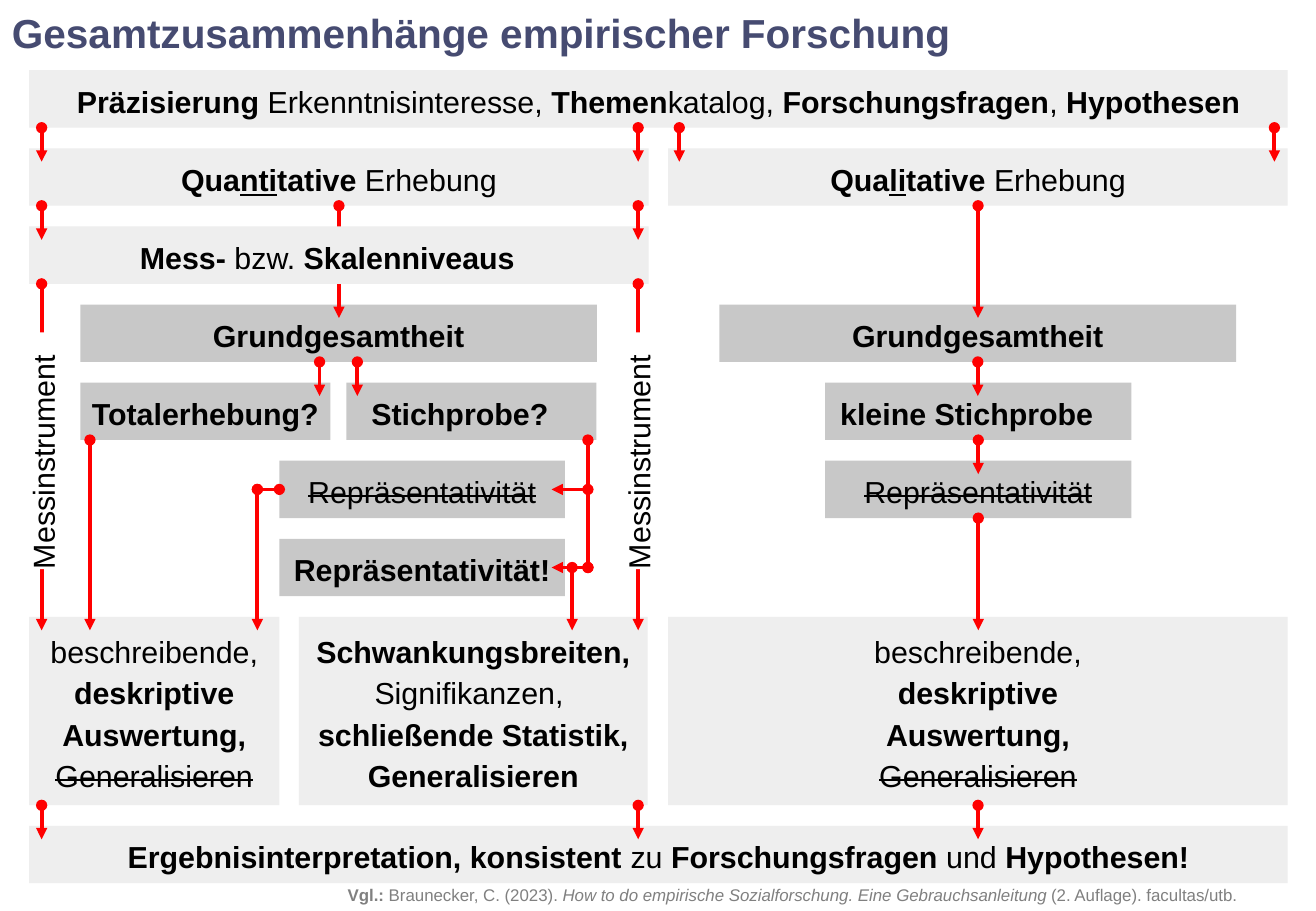
"""Build a flow chart slide on the stages of empirical research."""
from dataclasses import dataclass

import pptx
import pptx.dml.color
import pptx.enum.shapes
import pptx.enum.text
import pptx.oxml
import pptx.oxml.ns
import pptx.util
from pptx.util import Cm


@dataclass(frozen=True)
class Theme:
    font: str = "Arial"
    title: str = "464B71"
    text: str = "000000"
    source: str = "808080"
    arrow: str = "FF0000"
    light: str = "EEEEEE"
    dark: str = "C8C8C8"
    white: str = "FFFFFF"
    title_size: int = 24
    body_size: int = 18
    source_size: int = 10
    line_width: float = 2.25


THEME = Theme()
ALIGN = pptx.enum.text.PP_ALIGN
MIDDLE = pptx.enum.text.MSO_ANCHOR.MIDDLE

FIRST_TOP, EVALUATION_TOP, RESULT_TOP = 1.47, 12.9, 17.27
EVALUATION = 7
ROW_PITCH = (EVALUATION_TOP - FIRST_TOP) / EVALUATION
ROW_TOPS = [FIRST_TOP + row * ROW_PITCH for row in range(EVALUATION + 1)] + [RESULT_TOP]
BOX_HEIGHT, EVALUATION_HEIGHT = 1.2, 3.94
TIP_DEPTH = 0.28

LEFT, RIGHT = 0.61, 13.97
FULL, HALF = 26.31, 12.95
LEFT_RAIL, MIDDLE_RAIL = 0.87, 13.34
SAMPLE_RAIL, PLAIN_RAIL = 12.29, 5.38

POPULATION = [("Grundgesamtheit", "b")]
NOT_REPRESENTATIVE = [("Repräsentativität", "s")]
DESCRIPTIVE = [("beschreibende,\n", ""), ("deskriptive\nAuswertung,\n", "b"),
               ("Generalisieren", "s")]


def color(value):
    return pptx.dml.color.RGBColor.from_string(value)


def row_height(row):
    return EVALUATION_HEIGHT if row == EVALUATION else BOX_HEIGHT


def row_bottom(row):
    return Cm(ROW_TOPS[row] + row_height(row))


def row_middle(row):
    return Cm(ROW_TOPS[row] + row_height(row) / 2)


def row_tip(row):
    return Cm(ROW_TOPS[row] + TIP_DEPTH)


def set_margins(frame, left=0, top=0, right=0, bottom=0):
    frame.margin_left, frame.margin_top = Cm(left), Cm(top)
    frame.margin_right, frame.margin_bottom = Cm(right), Cm(bottom)


def write(frame, runs, size, ink, alignment):
    """Fill the first paragraph with runs styled by the flags b, i, u and s."""
    frame.word_wrap = True
    frame.vertical_anchor = MIDDLE
    paragraph = frame.paragraphs[0]
    paragraph.alignment = alignment
    paragraph.font.name = THEME.font
    paragraph.font.size = pptx.util.Pt(size)
    paragraph.font.color.rgb = color(ink)
    styles = {style for _, style in runs}
    all_bold = styles == {"b"}
    paragraph.font.bold = all_bold
    for text, style in runs:
        for index, line in enumerate(text.split("\n")):
            if index:
                paragraph.add_line_break()
            if not line:
                continue
            run = paragraph.add_run()
            run.text = line
            if "b" in style and not all_bold:
                run.font.bold = True
            if "i" in style:
                run.font.italic = True
            if "u" in style:
                run.font.underline = True
            if "s" in style:
                run._r.get_or_add_rPr().set("strike", "sngStrike")
    return paragraph


def add_panel(slide, bounds, fill, runs, alignment=ALIGN.CENTER, right_margin=0):
    shape = slide.shapes.add_shape(
        pptx.enum.shapes.MSO_SHAPE.RECTANGLE, *[Cm(value) for value in bounds])
    shape.shadow.inherit = False
    shape.fill.solid()
    shape.fill.fore_color.rgb = color(fill)
    shape.line.fill.background()
    set_margins(shape.text_frame, top=0.14, right=right_margin, bottom=0.15)
    paragraph = write(shape.text_frame, runs, THEME.body_size, THEME.text, alignment)
    paragraph.line_spacing = 1.14
    return shape


def add_box(slide, row, left, width, fill, runs, right_margin=0):
    bounds = (left, ROW_TOPS[row], width, row_height(row))
    return add_panel(slide, bounds, fill, runs, right_margin=right_margin)


def add_arrow(slide, start, end, tail="triangle"):
    connector = slide.shapes.add_connector(
        pptx.enum.shapes.MSO_CONNECTOR.STRAIGHT, *start, *end)
    connector.line.color.rgb = color(THEME.arrow)
    connector.line.width = pptx.util.Pt(THEME.line_width)
    properties = connector._element.spPr
    line = properties.find(pptx.oxml.ns.qn("a:ln"))
    for tag, kind in (("headEnd", "oval"), ("tailEnd", tail)):
        end_mark = pptx.oxml.parse_xml(
            f'<a:{tag} {pptx.oxml.ns.nsdecls("a")} type="{kind}"/>')
        line.append(end_mark)
    properties.append(pptx.oxml.parse_xml(f'<a:effectLst {pptx.oxml.ns.nsdecls("a")}/>'))
    return connector


def add_drop(slide, x, upper, lower):
    add_arrow(slide, (Cm(x), row_bottom(upper)), (Cm(x), row_tip(lower)))


def add_box_drop(slide, box, lower):
    x = box.left + box.width // 2
    connector = add_arrow(slide, (x, box.top + box.height), (x, row_tip(lower)))
    connector.begin_connect(box, 2)


def add_title(slide):
    title = slide.shapes.title
    title.left, title.top, title.width, title.height = Cm(0), Cm(0), Cm(23), Cm(1.37)
    set_margins(title.text_frame, 0.25, 0.13, 0.25, 0.13)
    write(title.text_frame, [("Gesamtzusammenhänge empirischer Forschung", "b")],
          THEME.title_size, THEME.title, ALIGN.LEFT)


def add_source(slide):
    box = slide.shapes.add_textbox(Cm(0), Cm(18.36), Cm(25.86), Cm(0.69))
    set_margins(box.text_frame, top=0.13, bottom=0.13)
    runs = [("Vgl.: ", "b"), ("Braunecker, C. (2023). ", ""),
            ("How to do empirische Sozialforschung. Eine Gebrauchsanleitung", "i"),
            (" (2. Auflage). facultas/utb.", "")]
    write(box.text_frame, runs, THEME.source_size, THEME.source, ALIGN.RIGHT)


def add_quantitative(slide):
    light, dark = THEME.light, THEME.dark
    survey = add_box(slide, 1, LEFT, HALF, light, [
        ("Qua", "b"), ("nti", "bu"), ("tative ", "b"), ("Erhebung", "")])
    add_box(slide, 3, 1.68, 10.8, dark, POPULATION)
    add_box_drop(slide, survey, 3)
    add_box(slide, 2, LEFT, HALF, light, [
        ("Mess- ", "b"), ("bzw.", ""), (" Skalenniveaus", "b")], 0.48)
    add_box(slide, 4, 1.68, 5.23, dark, [("Totalerhebung?", "b")])
    add_box(slide, 4, 7.24, 5.23, dark, [("Stichprobe?", "b")], 0.48)
    plain = add_box(slide, 5, 5.84, 5.97, dark, NOT_REPRESENTATIVE)
    add_box(slide, 6, 5.84, 5.97, dark, [("Repräsentativität!", "b")])
    add_box(slide, 7, LEFT, 5.23, light, DESCRIPTIVE)
    add_box(slide, 7, 6.25, 7.29, light, [
        ("Schwankungsbreiten, ", "b"), ("Signifikanzen, \n", ""),
        ("schließende Statistik, Generalisieren", "b")])

    for rail in (LEFT_RAIL, MIDDLE_RAIL):
        for upper, lower in ((0, 1), (1, 2), (2, 7), (7, 8)):
            add_drop(slide, rail, upper, lower)
    for x, upper, lower in ((6.68, 3, 4), (7.47, 3, 4), (1.88, 4, 7)):
        add_drop(slide, x, upper, lower)
    for left in (-1.63, 10.82):
        label = add_panel(slide, (left, 8.79, 4.95, 1.27), THEME.white,
                          [("Messinstrument", "")], ALIGN.LEFT)
        label.rotation = 270

    sample_x, plain_x, inference_x = Cm(SAMPLE_RAIL), Cm(PLAIN_RAIL), Cm(11.96)
    add_arrow(slide, (sample_x, row_bottom(4)), (sample_x, row_middle(6)), "oval")
    for row in (5, 6):
        add_arrow(slide, (sample_x, row_middle(row)), (Cm(11.53), row_middle(row)))
    add_arrow(slide, (inference_x, row_middle(6)), (inference_x, row_tip(7)))
    add_arrow(slide, (plain_x, row_middle(5)), (plain_x, row_tip(7)))
    link = add_arrow(slide, (plain_x, row_middle(5)), (plain.left, row_middle(5)), "oval")
    link.end_connect(plain, 1)


def add_qualitative(slide):
    boxes = [
        add_box(slide, 1, RIGHT, HALF, THEME.light, [
            ("Qua", "b"), ("li", "bu"), ("tative ", "b"), ("Erhebung", "")]),
        add_box(slide, 3, 15.04, 10.8, THEME.dark, POPULATION),
        add_box(slide, 4, 17.25, 6.4, THEME.dark, [("kleine Stichprobe", "b")], 0.48),
        add_box(slide, 5, 17.25, 6.4, THEME.dark, NOT_REPRESENTATIVE),
        add_box(slide, 7, RIGHT, HALF, THEME.light, DESCRIPTIVE),
    ]
    for box, lower in zip(boxes, (3, 4, 5, 7, 8)):
        add_box_drop(slide, box, lower)
    for x in (14.2, 26.64):
        add_drop(slide, x, 0, 1)


def main():
    presentation = pptx.Presentation()
    presentation.slide_width, presentation.slide_height = Cm(27.51), Cm(19.05)
    slide = presentation.slides.add_slide(presentation.slide_layouts.get_by_name("Title Only"))
    add_title(slide)
    add_box(slide, 0, LEFT, FULL, THEME.light, [
        ("Präzisierung ", "b"), ("Erkenntnisinteresse, ", ""), ("Themen", "b"),
        ("katalog, ", ""), ("Forschungsfragen", "b"), (", ", ""), ("Hypothesen", "b")])
    add_box(slide, 8, LEFT, FULL, THEME.light, [
        ("Ergebnisinterpretation, konsistent ", "b"), ("zu", ""),
        (" Forschungsfragen ", "b"), ("und ", ""), ("Hypothesen!", "b")])
    add_quantitative(slide)
    add_qualitative(slide)
    add_source(slide)
    presentation.save("out.pptx")


if __name__ == "__main__":
    main()
